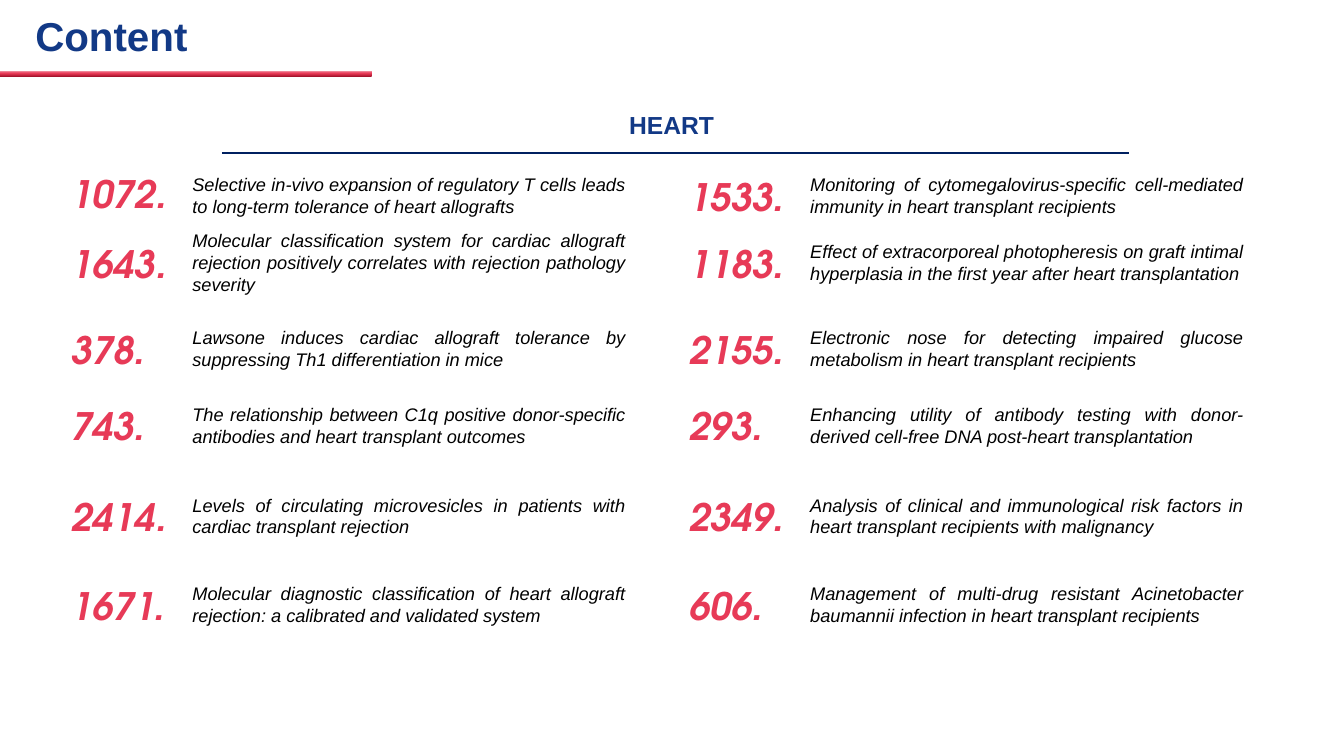
from copy import deepcopy

from pptx import Presentation
from pptx.dml.color import RGBColor
from pptx.enum.shapes import MSO_CONNECTOR, MSO_SHAPE
from pptx.enum.text import MSO_ANCHOR, MSO_AUTO_SIZE, PP_ALIGN
from pptx.oxml.ns import qn
from pptx.oxml.xmlchemy import OxmlElement
from pptx.util import Cm, Pt

# Content: (number, title) for each row of each column
TITLE = "Content"
SECTION = "HEART"
LEFT_ENTRIES = [
    ("1072.", "Selective in-vivo expansion of regulatory T cells leads to long-term tolerance of heart allografts"),
    ("1643.", "Molecular classification system for cardiac allograft rejection positively correlates with rejection pathology severity"),
    ("378.", "Lawsone induces cardiac allograft tolerance by suppressing Th1 differentiation in mice"),
    ("743.", "The relationship between C1q positive donor-specific antibodies and heart transplant outcomes"),
    ("2414.", "Levels of circulating microvesicles in patients with cardiac transplant rejection"),
    ("1671.", "Molecular diagnostic classification of heart allograft rejection: a calibrated and validated system"),
]
RIGHT_ENTRIES = [
    ("1533.", "Monitoring of cytomegalovirus-specific cell-mediated immunity in heart transplant recipients"),
    ("1183.", "Effect of extracorporeal photopheresis on graft intimal hyperplasia in the first year after heart transplantation"),
    ("2155.", "Electronic nose for detecting impaired glucose metabolism in heart transplant recipients"),
    ("293.", "Enhancing utility of antibody testing with donor-derived cell-free DNA post-heart transplantation"),
    ("2349.", "Analysis of clinical and immunological risk factors in heart transplant recipients with malignancy"),
    ("606.", "Management of multi-drug resistant Acinetobacter baumannii infection in heart transplant recipients"),
]

# Layout in centimetres
COLUMNS = [(1.55, LEFT_ENTRIES), (17.12, RIGHT_ENTRIES)]
ROW_TOPS = [4.24, 5.94, 8.1, 10.03, 12.32, 14.55]
NUMBER_SHIFTS = {"1072.": -0.07}
TITLE_SHIFTS = {"1643.": -0.28}
TITLE_OFFSET = 3.05
NUMBER_SIZE = (3.61, 1.42)
ENTRY_SIZE = (11.4, 1.37)

# Style
BLUE = RGBColor(0x12, 0x39, 0x86)
NAVY = RGBColor(0x00, 0x20, 0x60)
RED = RGBColor(0xE7, 0x3A, 0x57)
BLACK = RGBColor(0x00, 0x00, 0x00)
BAR_STOPS = [
    (0, RGBColor(0xA7, 0x14, 0x2D)),
    (0.48, RGBColor(0xE7, 0x38, 0x55)),
    (1, RGBColor(0xF0, 0x84, 0x96)),
]
BODY_FONT = "Arial"
NUMBER_FONT = "TeX Gyre Adventor"
LEFT, CENTER, JUSTIFY = PP_ALIGN.LEFT, PP_ALIGN.CENTER, PP_ALIGN.JUSTIFY
MIDDLE = MSO_ANCHOR.MIDDLE
NO_FIT, GROW = MSO_AUTO_SIZE.NONE, MSO_AUTO_SIZE.SHAPE_TO_FIT_TEXT


def write(box, text, size, color, font=BODY_FONT, bold=False, italic=False,
          align=LEFT, heading=False):
    """Fill a text box; headings sit mid-height, without margins."""
    frame = box.text_frame
    frame.word_wrap = True
    frame.auto_size = NO_FIT if heading else GROW
    para = frame.paragraphs[0]
    if heading:
        frame.vertical_anchor = MIDDLE
        frame.margin_left = frame.margin_right = 0
        frame.margin_top = frame.margin_bottom = 0
        para.line_spacing = 0.9
    para.alignment = align
    span = para.add_run()
    span.text = text
    span.font.name, span.font.size = font, Pt(size)
    span.font.bold, span.font.italic = bold, italic
    span.font.color.rgb = color


def add_box(slide, left, top, size):
    return slide.shapes.add_textbox(Cm(left), Cm(top), *map(Cm, size))


def add_title_bar(slide):
    bar = slide.shapes.add_shape(MSO_SHAPE.RECTANGLE, 0, Cm(1.78), Cm(9.37), Cm(0.15))
    bar.shadow.inherit = False
    bar.line.fill.background()
    bar.fill.gradient()
    bar.fill.gradient_angle = 90
    stop_list = bar.element.spPr.find(".//" + qn("a:gsLst"))
    stop_list.append(deepcopy(stop_list[0]))
    for stop, (position, color) in zip(bar.fill.gradient_stops, BAR_STOPS):
        stop.position = position
        stop.color.rgb = color


def add_section(slide):
    box = add_box(slide, 5.38, 2.62, (23.09, 1.12))
    write(box, SECTION, 17.6, BLUE, bold=True, align=CENTER, heading=True)
    rule = slide.shapes.add_connector(
        MSO_CONNECTOR.STRAIGHT, Cm(5.59), Cm(3.86), Cm(28.45), Cm(3.86))
    rule.line.color.rgb = NAVY
    rule.line.width = Pt(1)
    rule.element.spPr.append(OxmlElement("a:effectLst"))


def add_entry(slide, left, top, number, title):
    number_box = add_box(slide, left, top + NUMBER_SHIFTS.get(number, 0), NUMBER_SIZE)
    write(number_box, number, 27, RED, font=NUMBER_FONT, bold=True, italic=True)
    title_box = add_box(slide, left + TITLE_OFFSET,
                        top + TITLE_SHIFTS.get(number, 0), ENTRY_SIZE)
    write(title_box, title, 13, BLACK, italic=True, align=JUSTIFY)


def main():
    deck = Presentation()
    deck.slide_width, deck.slide_height = Cm(33.87), Cm(19.05)
    slide = deck.slides.add_slide(deck.slide_layouts[5])

    # Title
    title = slide.shapes.title
    title.left, title.top, title.width, title.height = Cm(0.89), Cm(0.41), Cm(29.21), Cm(1.12)
    write(title, TITLE, 28.8, BLUE, bold=True, heading=True)
    add_title_bar(slide)

    # Section heading and its two columns of entries
    add_section(slide)
    for left, entries in COLUMNS:
        for top, (number, entry) in zip(ROW_TOPS, entries):
            add_entry(slide, left, top, number, entry)

    deck.save("out.pptx")


if __name__ == "__main__":
    main()
